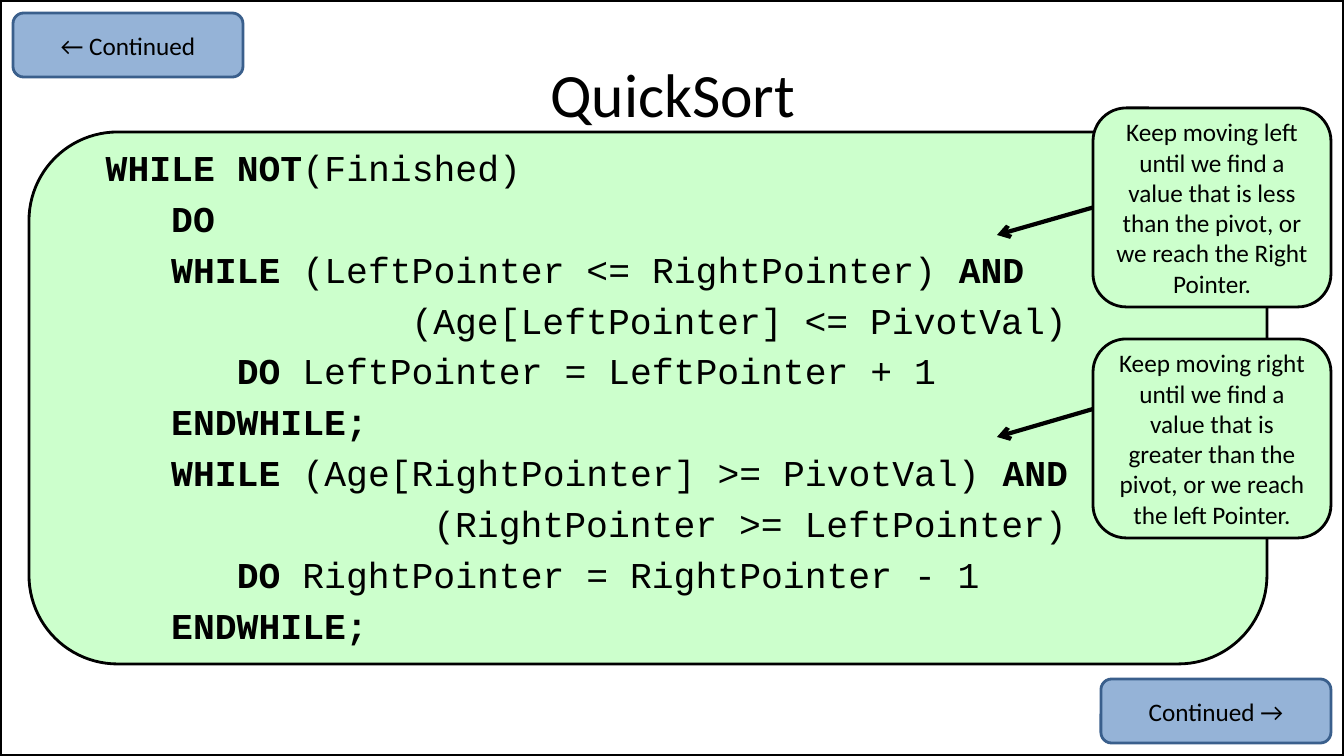
"""Build the QuickSort pseudocode slide with its two explanatory callouts."""
from dataclasses import dataclass

from lxml.etree import SubElement
from pptx import Presentation
from pptx.dml.color import RGBColor
from pptx.enum.shapes import MSO_CONNECTOR, MSO_SHAPE
from pptx.enum.text import MSO_ANCHOR, PP_ALIGN
from pptx.oxml.ns import qn
from pptx.util import Emu, Pt

TITLE = ("QuickSort", (68, 30, 1210, 126))
CODE_BOX = (68, 140, 1210, 499)
CODE_LINES = [
    (1, [("WHILE NOT", True), ("(Finished)", False)]),
    (4, [("DO", True)]),
    (4, [("WHILE ", True), ("(LeftPointer <= RightPointer)", False), (" AND", True)]),
    (15, [("(Age[LeftPointer] <= PivotVal)", False)]),
    (7, [("DO ", True), ("LeftPointer = LeftPointer + 1", False)]),
    (4, [("ENDWHILE;", True)]),
    (4, [("WHILE ", True), ("(Age[RightPointer] >= PivotVal)", False), (" AND", True)]),
    (16, [("(RightPointer >= LeftPointer)", False)]),
    (7, [("DO ", True), ("RightPointer = RightPointer - 1", False)]),
    (4, [("ENDWHILE;", True)]),
]
BUTTONS = [("Continued →", (1101, 679)), ("← Continued", (13, 13))]
BUTTON_SIZE = (230, 64)
CALLOUTS = [
    {"text": "Keep moving left until we find a value that is less than the pivot, "
             "or we reach the Right Pointer.",
     "top": 108, "start": None, "tip": 235},
    {"text": "Keep moving right until we find a value that is greater than the pivot, "
             "or we reach the left Pointer.",
     "top": 339, "start": 409, "tip": 437},
]
CALLOUT_LEFT, CALLOUT_SIZE, ARROW_TIP_X = 1093, (238, 199), 997
SLIDE_SIZE = (1344, 756)
PANEL_BOX = (29, 132, 1238, 532)
CODE_MARGIN = 6
PX_PER_INCH = 100.8


@dataclass(frozen=True)
class Theme:
    """Colours, fonts and sizes in points."""
    ink: str = "000000"
    panel: str = "CCFFCC"
    button: str = "95B3D7"
    button_line: str = "3A5F8C"
    body_font: str = "Calibri"
    code_font: str = "Courier New"
    title_size: int = 44
    label_size: int = 18
    code_size: int = 26
    code_space: float = 5.2
    code_advance: float = 0.6
    thin: int = 2
    thick: int = 3


THEME = Theme()


def px(length):
    """Turn pixels into EMU."""
    return Emu(round(length * 914400 / PX_PER_INCH))


def write_text(frame, lines, font=THEME.body_font, size=THEME.label_size,
               align=PP_ALIGN.CENTER, anchor=MSO_ANCHOR.MIDDLE, space=0):
    """Write (column, runs) lines, indenting each by its column."""
    frame.word_wrap = True
    frame.vertical_anchor = anchor
    for index, (column, runs) in enumerate(lines):
        paragraph = frame.add_paragraph() if index else frame.paragraphs[0]
        paragraph.alignment = align
        paragraph.space_before = Pt(space)
        if column:
            margin = px(CODE_MARGIN) + Pt(column * size * THEME.code_advance)
            properties = paragraph._p.get_or_add_pPr()
            properties.set("marL", str(margin))
            properties.set("indent", "0")
        for text, bold in runs:
            run = paragraph.add_run()
            run.text = text
            run.font.name = font
            run.font.size = Pt(size)
            run.font.bold = bold
            run.font.color.rgb = RGBColor.from_string(THEME.ink)


def add_box(slide, box, fill=None, line=THEME.ink, width=THEME.thin,
            kind=MSO_SHAPE.ROUNDED_RECTANGLE, text=None):
    """Add an outlined shape, with a centred label if text is given."""
    shape = slide.shapes.add_shape(kind, *map(px, box))
    shape.shadow.inherit = False
    if fill:
        shape.fill.solid()
        shape.fill.fore_color.rgb = RGBColor.from_string(fill)
    else:
        shape.fill.background()
    shape.line.color.rgb = RGBColor.from_string(line)
    shape.line.width = Pt(width)
    if text:
        write_text(shape.text_frame, [(0, [(text, False)])])
    return shape


def add_text_box(slide, box, lines, **text_format):
    """Add a text box holding the given lines."""
    shape = slide.shapes.add_textbox(*map(px, box))
    write_text(shape.text_frame, lines, **text_format)


def add_callout(slide, text, top, start, tip):
    """Add a callout and its arrow, joined to the side when start is None."""
    width, height = CALLOUT_SIZE
    shape = add_box(slide, (CALLOUT_LEFT, top, width, height), fill=THEME.panel, text=text)
    start_y = top + height / 2 if start is None else start
    arrow = slide.shapes.add_connector(
        MSO_CONNECTOR.STRAIGHT, px(CALLOUT_LEFT), px(start_y), px(ARROW_TIP_X), px(tip))
    if start is None:
        arrow.begin_connect(shape, 1)
    arrow.line.color.rgb = RGBColor.from_string(THEME.ink)
    arrow.line.width = Pt(THEME.thick)
    SubElement(arrow.line._get_or_add_ln(), qn("a:tailEnd"), type="arrow")
    SubElement(arrow._element.spPr, qn("a:effectLst"))


def main():
    """Assemble the slide and save it."""
    presentation = Presentation()
    presentation.slide_width, presentation.slide_height = map(px, SLIDE_SIZE)
    slide = presentation.slides.add_slide(presentation.slide_layouts[6])

    add_box(slide, (0, 0, *SLIDE_SIZE), width=THEME.thick, kind=MSO_SHAPE.RECTANGLE)
    add_box(slide, PANEL_BOX, fill=THEME.panel)
    add_text_box(slide, CODE_BOX, CODE_LINES, font=THEME.code_font, size=THEME.code_size,
                 align=PP_ALIGN.LEFT, anchor=MSO_ANCHOR.TOP, space=THEME.code_space)
    title, title_box = TITLE
    add_text_box(slide, title_box, [(0, [(title, False)])], size=THEME.title_size)
    for label, position in BUTTONS:
        add_box(slide, (*position, *BUTTON_SIZE), fill=THEME.button,
                line=THEME.button_line, text=label)
    for callout in CALLOUTS:
        add_callout(slide, **callout)

    presentation.save("out.pptx")


if __name__ == "__main__":
    main()
